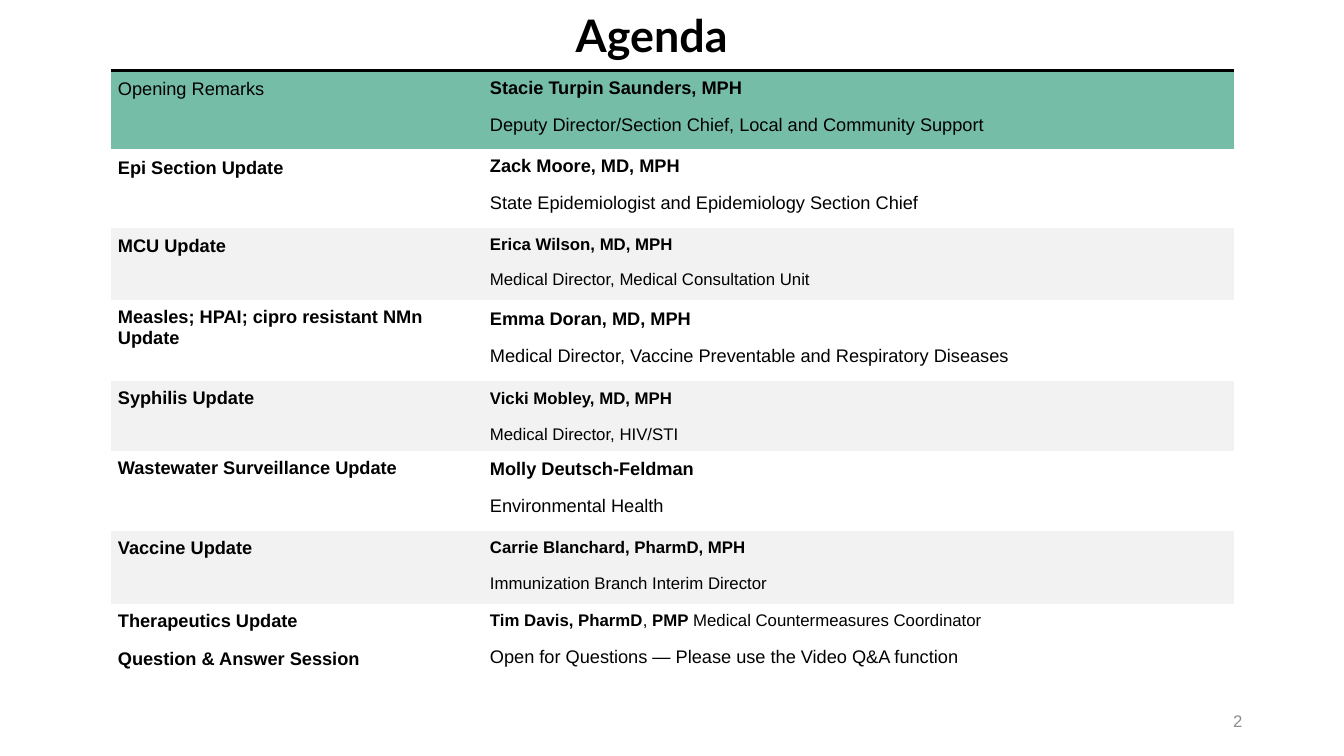
"""Builds the agenda slide: a title, a table of speakers and a page number."""
import pptx
import pptx.util
import pptx.dml.color
import pptx.enum.text
import pptx.oxml
import pptx.oxml.ns

AGENDA = [
    ("Opening Remarks", 13, ["Stacie Turpin Saunders, MPH"],
     "Deputy Director/Section Chief, Local and Community Support"),
    ("Epi Section Update", 13, ["Zack Moore, MD, MPH"],
     "State Epidemiologist and Epidemiology Section Chief"),
    ("MCU Update", 12, ["Erica Wilson, MD, MPH"],
     "Medical Director, Medical Consultation Unit"),
    ("Measles; HPAI; cipro resistant NMn Update", 13, ["Emma Doran, MD, MPH"],
     "Medical Director, Vaccine Preventable and Respiratory Diseases"),
    ("Syphilis Update", 12, ["Vicki Mobley, MD, MPH"], "Medical Director, HIV/STI"),
    ("Wastewater Surveillance Update", 13, ["Molly Deutsch-Feldman"],
     "Environmental Health"),
    ("Vaccine Update", 12, ["Carrie Blanchard, PharmD, MPH"],
     "Immunization Branch Interim Director"),
    ("Therapeutics Update", 12,
     ["Tim Davis, PharmD", ", ", "PMP", " Medical Countermeasures Coordinator"], ""),
    ("Question & Answer Session", 13,
     ["", "Open for Questions — Please use the Video Q&A function"], ""),
]
COLORS = {"ink": "000000", "green": "75BDA7", "band": "F2F2F2", "page": "8C8C8C"}
COLS = [3.69, 7.45]
ROWS = [0.78, 0.78, 0.72, 0.8, 0.69, 0.8, 0.72, 0.36, 0.4]
LEFT, TOP = 1.1, 0.7
LOOSE = [{0, 1, 2, 8}, {3, 4, 5}]
PLAIN = "{2D5ABB26-0587-4C30-8999-92F81FD0307C}"
INSET = dict.fromkeys(
    ("margin_left", "margin_right", "margin_top", "margin_bottom"),
    pptx.util.Inches(0.07))
Inches, Pt = pptx.util.Inches, pptx.util.Pt


def apply(item, values):
    for name, value in values.items():
        setattr(item, name, value)


def tint(name):
    return pptx.dml.color.RGBColor.from_string(COLORS[name])


def write(para, text, size, bold=False, face="Arial", color="ink"):
    run = para.add_run()
    run.text = text
    apply(run.font, {"size": Pt(size), "bold": bold, "name": face})
    run.font.color.rgb = tint(color)


def space(para, loose=False, first=True):
    apply(para, {"space_before": Pt(0 if first else 6), "space_after": Pt(6),
                 "line_spacing": 1.07 if loose else 1.0})


def shade(cell, row):
    if row == 0 or row in (2, 4, 6):
        cell.fill.solid()
        cell.fill.fore_color.rgb = tint("band" if row else "green")
    else:
        cell.fill.background()
    if row == 0:
        rule = pptx.oxml.parse_xml(
            f'<a:lnT {pptx.oxml.ns.nsdecls("a")} w="{Pt(2.25)}"><a:solidFill>'
            f'<a:srgbClr val="{COLORS["ink"]}"/></a:solidFill></a:lnT>')
        cell._tc.get_or_add_tcPr().insert(0, rule)


def fill(table):
    for row, (topic, size, names, role) in enumerate(AGENDA):
        table.rows[row].height = Inches(ROWS[row])
        for col in range(2):
            cell = table.cell(row, col)
            apply(cell, INSET)
            shade(cell, row)
            para = cell.text_frame.paragraphs[0]
            space(para, row in LOOSE[col])
            if col == 0:
                write(para, topic, 13, row > 0)
                continue
            for spot, part in enumerate(names):
                if part:
                    write(para, part, size, spot % 2 == 0)
            if role:
                para = cell.text_frame.add_paragraph()
                space(para, first=False)
                write(para, role, size)


def main():
    deck = pptx.Presentation()
    apply(deck, {"slide_width": Inches(13.33), "slide_height": Inches(7.5)})
    slide = deck.slides.add_slide(deck.slide_layouts[5])

    frame = slide.shapes.add_table(
        len(ROWS), len(COLS), Inches(LEFT), Inches(TOP),
        Inches(sum(COLS)), Inches(sum(ROWS)))
    table = frame.table
    apply(table, {"first_row": False, "horz_banding": False})
    table._tbl.tblPr.find(pptx.oxml.ns.qn("a:tableStyleId")).text = PLAIN
    for col, width in enumerate(COLS):
        table.columns[col].width = Inches(width)
    fill(table)

    title = slide.shapes.title
    apply(title, {"left": Inches(5.61), "top": Inches(0.03),
                  "width": Inches(4.84), "height": Inches(0.64)})
    apply(title.text_frame, {
        "vertical_anchor": pptx.enum.text.MSO_ANCHOR.TOP,
        "auto_size": pptx.enum.text.MSO_AUTO_SIZE.NONE})
    para = title.text_frame.paragraphs[0]
    para.alignment = pptx.enum.text.PP_ALIGN.LEFT
    write(para, "Agenda", 32, True, "Lato")

    page = slide.shapes.add_textbox(
        Inches(9.42), Inches(6.95), Inches(3), Inches(0.4)).text_frame
    apply(page, {"word_wrap": True,
                 "vertical_anchor": pptx.enum.text.MSO_ANCHOR.MIDDLE})
    para = page.paragraphs[0]
    para.alignment = pptx.enum.text.PP_ALIGN.RIGHT
    space(para)
    write(para, "2", 12, color="page")
    deck.save("out.pptx")


if __name__ == "__main__":
    main()
